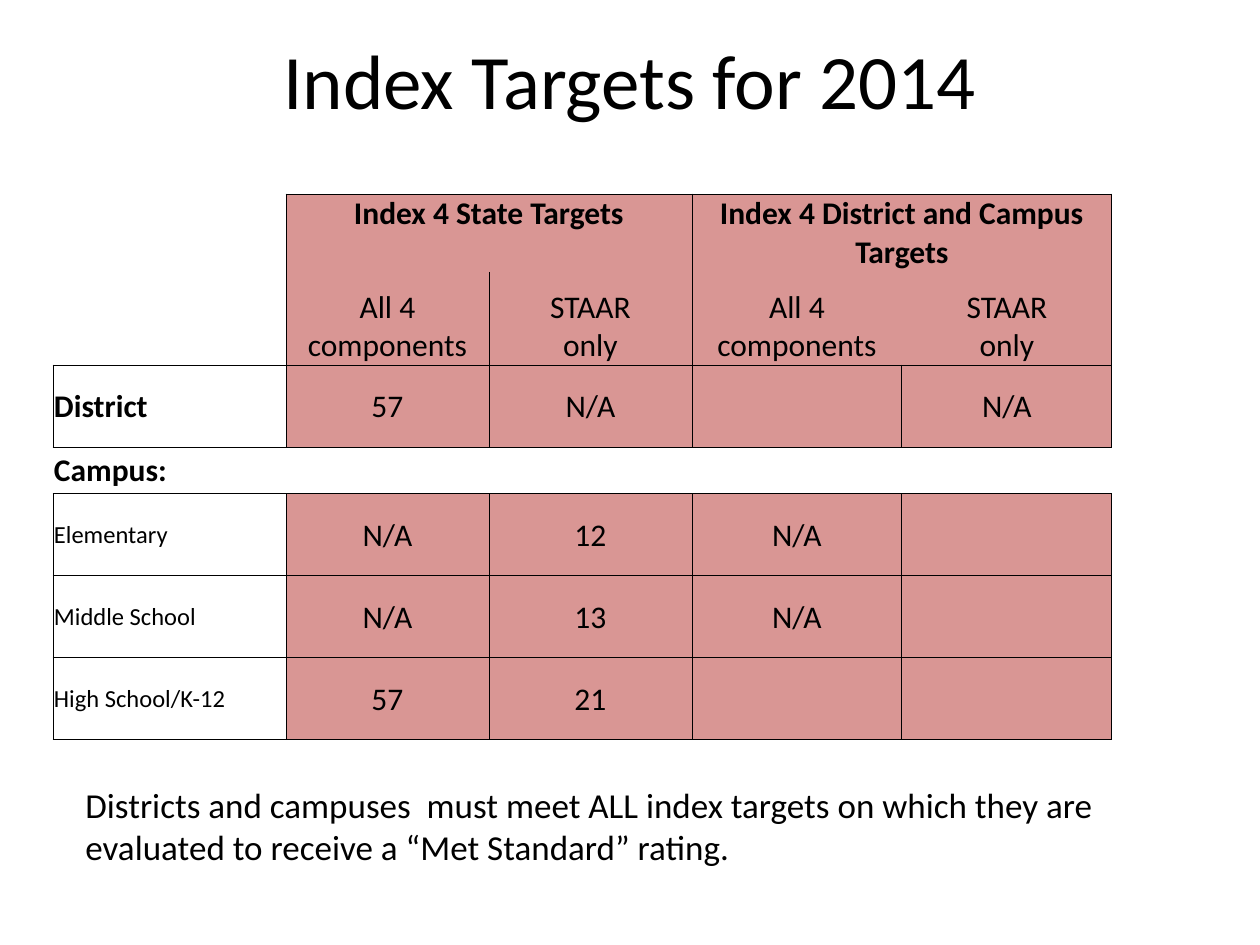
from lxml.etree import SubElement
from pptx import Presentation
from pptx.dml.color import RGBColor
from pptx.enum.text import MSO_ANCHOR as Anchor, PP_ALIGN as Align
from pptx.oxml.ns import qn
from pptx.util import Emu, Pt

PX_PER_INCH = 126
COLORS = {"text": "000000", "line": "000000", "target": "D99694"}
FONT = "Calibri"

COLUMN_WIDTHS = [233, 203, 203, 210, 210]
ROW_HEIGHTS = [83, 58, 78, 93, 82, 47, 82, 82, 82, 47]
COMPONENTS, STAAR = "All 4 components", "STAAR\nonly"
HEADER_ROW, SUBHEADER_ROW = 2, 3
ROWS = [
    [""] * 5,
    [""] * 5,
    ["", "Index 4 State Targets", "", "Index 4 District and Campus Targets", ""],
    ["", COMPONENTS, STAAR, COMPONENTS, STAAR],
    ["District", "57", "N/A", "", "N/A"],
    ["Campus:", "", "", "", ""],
    ["Elementary", "N/A", "12", "N/A", ""],
    ["Middle School", "N/A", "13", "N/A", ""],
    ["High School/K-12", "57", "21", "", ""],
    [""] * 5,
]
TARGET_ROWS = {2, 3, 4, 6, 7, 8}
# Row, first column, last column
MERGES = [(0, 0, 4), (2, 1, 2), (2, 3, 4), (9, 1, 3)]
# Visible sides of each cell: Left, Right, Top, Bottom
BOXED = ["LRTB"] * 5
BORDERS = [
    [""] * 5,
    ["", "B", "B", "B", "B"],
    ["R", "LRT", "RT", "LRT", "RT"],
    ["RB", "LRB", "LRB", "LB", "RB"],
    BOXED,
    ["TB"] * 5,
    BOXED,
    BOXED,
    BOXED,
    ["T"] * 5,
]


def px(value):
    return Emu(round(value * 914400 / PX_PER_INCH))


def write_text(frame, text, size=18, bold=False, align=Align.LEFT, anchor=Anchor.TOP):
    frame.word_wrap = True
    frame.vertical_anchor = anchor
    for index, line in enumerate(text.split("\n")):
        paragraph = frame.add_paragraph() if index else frame.paragraphs[0]
        paragraph.alignment = align
        run = paragraph.add_run()
        run.text = line
        run.font.name = FONT
        run.font.size = Pt(size)
        run.font.bold = bold
        run.font.color.rgb = RGBColor.from_string(COLORS["text"])


def set_borders(cell, sides):
    properties = cell._tc.get_or_add_tcPr()
    for side in "LRTB":
        line = SubElement(properties, qn(f"a:ln{side}"), w=str(Pt(0.5)))
        if side in sides:
            fill = SubElement(line, qn("a:solidFill"))
            SubElement(fill, qn("a:srgbClr"), val=COLORS["line"])
        else:
            SubElement(line, qn("a:noFill"))


def cell_format(row, column):
    if row == HEADER_ROW:
        return {"bold": True, "align": Align.CENTER}
    if row == SUBHEADER_ROW:
        return {"align": Align.CENTER, "anchor": Anchor.BOTTOM}
    if column:
        return {"align": Align.CENTER, "anchor": Anchor.MIDDLE}
    is_group = row in (4, 5)
    return {"size": 18 if is_group else 14, "bold": is_group, "anchor": Anchor.MIDDLE}


def add_title(slide, left, top, width, height):
    title = slide.shapes.title
    title.left, title.top, title.width, title.height = map(px, (left, top, width, height))
    write_text(title.text_frame, "Index Targets for 2014", size=44,
               align=Align.CENTER, anchor=Anchor.MIDDLE)


def add_targets_table(slide, left, top):
    frame = slide.shapes.add_table(
        len(ROW_HEIGHTS), len(COLUMN_WIDTHS), px(left), px(top),
        px(sum(COLUMN_WIDTHS)), px(sum(ROW_HEIGHTS)))
    table = frame.table
    table.first_row = table.horz_banding = False
    for column, width in zip(table.columns, COLUMN_WIDTHS):
        column.width = px(width)
    for row, height in zip(table.rows, ROW_HEIGHTS):
        row.height = px(height)
    for row, first, last in MERGES:
        table.cell(row, first).merge(table.cell(row, last))

    # Cell borders, fills and text
    for row, texts in enumerate(ROWS):
        for column, text in enumerate(texts):
            cell = table.cell(row, column)
            cell.margin_left = cell.margin_right = cell.margin_top = px(1)
            cell.margin_bottom = 0
            set_borders(cell, BORDERS[row][column])
            if column and row in TARGET_ROWS:
                cell.fill.solid()
                cell.fill.fore_color.rgb = RGBColor.from_string(COLORS["target"])
            else:
                cell.fill.background()
            if text:
                style = cell_format(row, column)
                cell.vertical_anchor = style.pop("anchor", Anchor.TOP)
                write_cell(cell, text, style)


def write_cell(cell, text, style):
    write_text(cell.text_frame, text, anchor=None, **style)


def add_note(slide, left, top, width, height):
    note = slide.shapes.add_textbox(*map(px, (left, top, width, height)))
    write_text(note.text_frame,
               "Districts and campuses  must meet ALL index targets on which they are "
               "evaluated to receive a “Met Standard” rating.", size=20)


def main():
    presentation = Presentation()
    presentation.slide_width, presentation.slide_height = px(1260), px(945)
    slide = presentation.slides.add_slide(presentation.slide_layouts[5])
    add_title(slide, 63, 0, 1134, 158)
    add_targets_table(slide, 53, 53)
    add_note(slide, 73, 777, 1081, 97)
    presentation.save("out.pptx")


if __name__ == "__main__":
    main()
